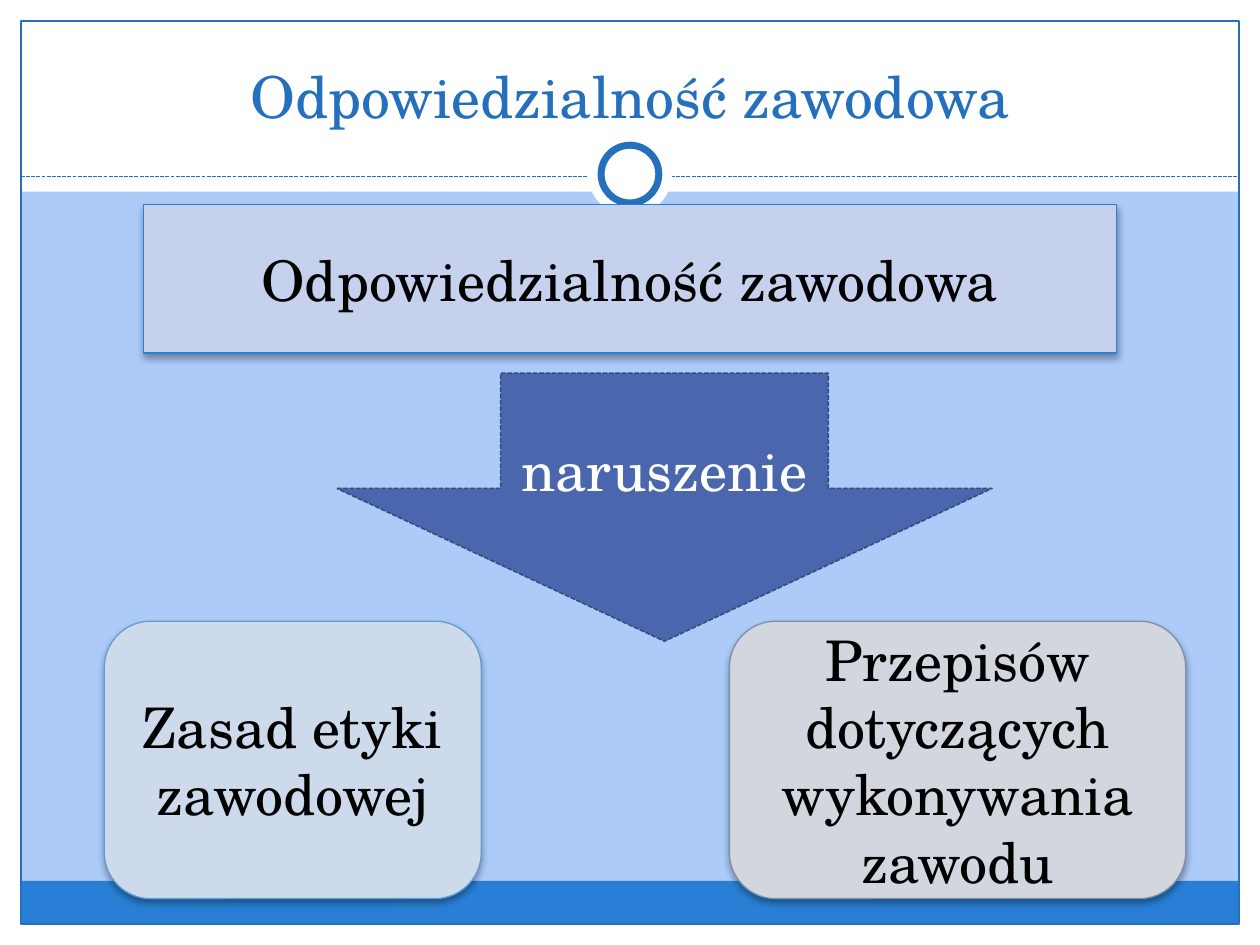
from lxml import etree
from pptx import Presentation
from pptx.dml.color import RGBColor
from pptx.enum.dml import MSO_LINE
from pptx.enum.shapes import MSO_CONNECTOR, MSO_SHAPE
from pptx.enum.text import MSO_ANCHOR, MSO_AUTO_SIZE, PP_ALIGN
from pptx.oxml.ns import qn
from pptx.util import Pt

RECTANGLE = MSO_SHAPE.RECTANGLE
ROUNDED = MSO_SHAPE.ROUNDED_RECTANGLE
OVAL = MSO_SHAPE.OVAL
DOWN_ARROW = MSO_SHAPE.DOWN_ARROW
STRAIGHT = MSO_CONNECTOR.STRAIGHT
DASH = MSO_LINE.SQUARE_DOT
MIDDLE, BOTTOM = MSO_ANCHOR.MIDDLE, MSO_ANCHOR.BOTTOM
CENTER = PP_ALIGN.CENTER
NO_AUTOSIZE = MSO_AUTO_SIZE.NONE

FONT = "TeX Gyre Schola"
WIDTH, HEIGHT = 720, 540
MARGIN = 12
RULE_Y = 100.8
COLORS = {
    "background": "ACCBF9", "white": "FFFFFF", "black": "000000",
    "frame": "2470BC", "band": "297FD5",
    "heading": "C6D2ED", "arrow": "4A66AC", "arrow_line": "374B7F",
    "ethics": "CCDAEC", "ethics_line": "629DD1",
    "rules": "D2D6DE", "rules_line": "7F8FA9",
}


def color(name):
    return RGBColor.from_string(COLORS[name])


def style_line(line, name, width=0.75, dash=None):
    line.color.rgb = color(name)
    line.width = Pt(width)
    if dash is not None:
        line.dash_style = dash


def add_shape(slide, kind, box, fill=None, line=None, width=0.75, dash=None):
    shape = slide.shapes.add_shape(kind, *map(Pt, box))
    shape.shadow.inherit = False
    if fill:
        shape.fill.solid()
        shape.fill.fore_color.rgb = color(fill)
    else:
        shape.fill.background()
    if line:
        style_line(shape.line, line, width, dash)
    else:
        shape.line.fill.background()
    return shape


def add_circle(slide, diameter, center_y, **style):
    box = ((WIDTH - diameter) / 2, center_y - diameter / 2, diameter, diameter)
    return add_shape(slide, OVAL, box, "white", **style)


def set_text(shape, text, size, name, anchor=MIDDLE):
    frame = shape.text_frame
    frame.text = text
    frame.word_wrap = True
    frame.auto_size = NO_AUTOSIZE
    frame.vertical_anchor = anchor
    paragraph = frame.paragraphs[0]
    paragraph.alignment = CENTER
    font = paragraph.runs[0].font
    font.name, font.size = FONT, Pt(size)
    font.color.rgb = color(name)


def add_shadow(shape):
    effects = shape.element.spPr.find(qn("a:effectLst"))
    shadow = etree.SubElement(effects, qn("a:outerShdw"), blurRad=str(Pt(4)),
                              dist=str(Pt(2)), dir="5400000", rotWithShape="0")
    shade = etree.SubElement(shadow, qn("a:srgbClr"), val=COLORS["black"])
    etree.SubElement(shade, qn("a:alpha"), val="35000")


def add_card(slide, kind, box, text, fill, line):
    card = add_shape(slide, kind, box, fill, line)
    add_shadow(card)
    set_text(card, text, 32, "black")


def add_frame(slide):
    # White edges around the coloured background
    for box in ((0, HEIGHT - MARGIN, WIDTH, MARGIN), (0, 0, WIDTH, 109.5),
                (0, 0, MARGIN, HEIGHT), (WIDTH - MARGIN, 0, MARGIN, HEIGHT)):
        add_shape(slide, RECTANGLE, box, "white")

    # Bottom band and outline
    inner_width = WIDTH - 2 * MARGIN
    add_shape(slide, RECTANGLE, (MARGIN, 503.3, inner_width, 24.7), "band")
    add_shape(slide, RECTANGLE,
              (MARGIN, MARGIN, inner_width, HEIGHT - 2 * MARGIN), line="frame")

    # Dashed rule with a ring in the middle
    rule = slide.shapes.add_connector(
        STRAIGHT, Pt(MARGIN), Pt(RULE_Y), Pt(WIDTH - MARGIN), Pt(RULE_Y))
    style_line(rule.line, "frame", dash=DASH)
    etree.SubElement(rule.element.spPr, qn("a:effectLst"))
    add_circle(slide, 48, 99.5)
    add_circle(slide, 33, 99.5, line="frame", width=4)


def add_title(slide, text):
    title = slide.shapes.title
    title.left, title.top, title.width, title.height = map(Pt, (24, 18, 672, 60))
    set_text(title, text, 33, "frame", BOTTOM)
    # Bring the title in front of the white header
    slide.shapes[-1].element.addnext(title.element)


def main():
    presentation = Presentation()
    presentation.slide_width, presentation.slide_height = Pt(WIDTH), Pt(HEIGHT)
    slide = presentation.slides.add_slide(presentation.slide_layouts[5])
    slide.background.fill.solid()
    slide.background.fill.fore_color.rgb = color("background")

    add_frame(slide)
    add_title(slide, "Odpowiedzialność zawodowa")

    # Heading box
    add_card(slide, RECTANGLE, (82, 116.7, 556, 85),
             "Odpowiedzialność zawodowa", "heading", "band")

    # Arrow to the two kinds of breach
    arrow = add_shape(slide, DOWN_ARROW, (192.5, 213.2, 374.4, 153.2),
                      "arrow", "arrow_line", 0.9, DASH)
    arrow.adjustments[0], arrow.adjustments[1] = 0.5, 0.57
    set_text(arrow, "naruszenie", 32, "white")

    # What is breached
    add_card(slide, ROUNDED, (59.6, 355, 215.4, 158.5),
             "Zasad etyki zawodowej", "ethics", "ethics_line")
    add_card(slide, ROUNDED, (416.8, 355, 260.8, 158.5),
             "Przepisów dotyczących wykonywania zawodu", "rules", "rules_line")

    presentation.save("out.pptx")


if __name__ == "__main__":
    main()
